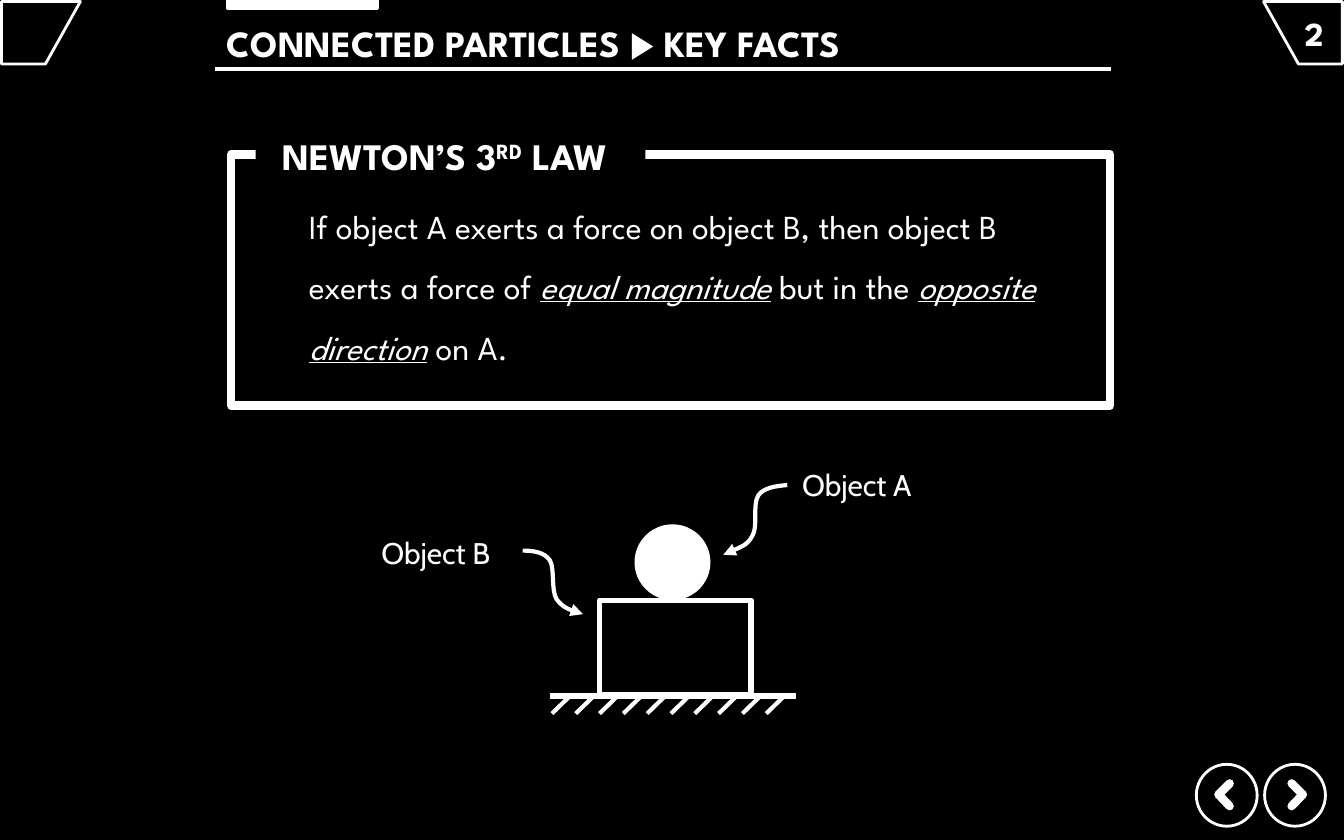
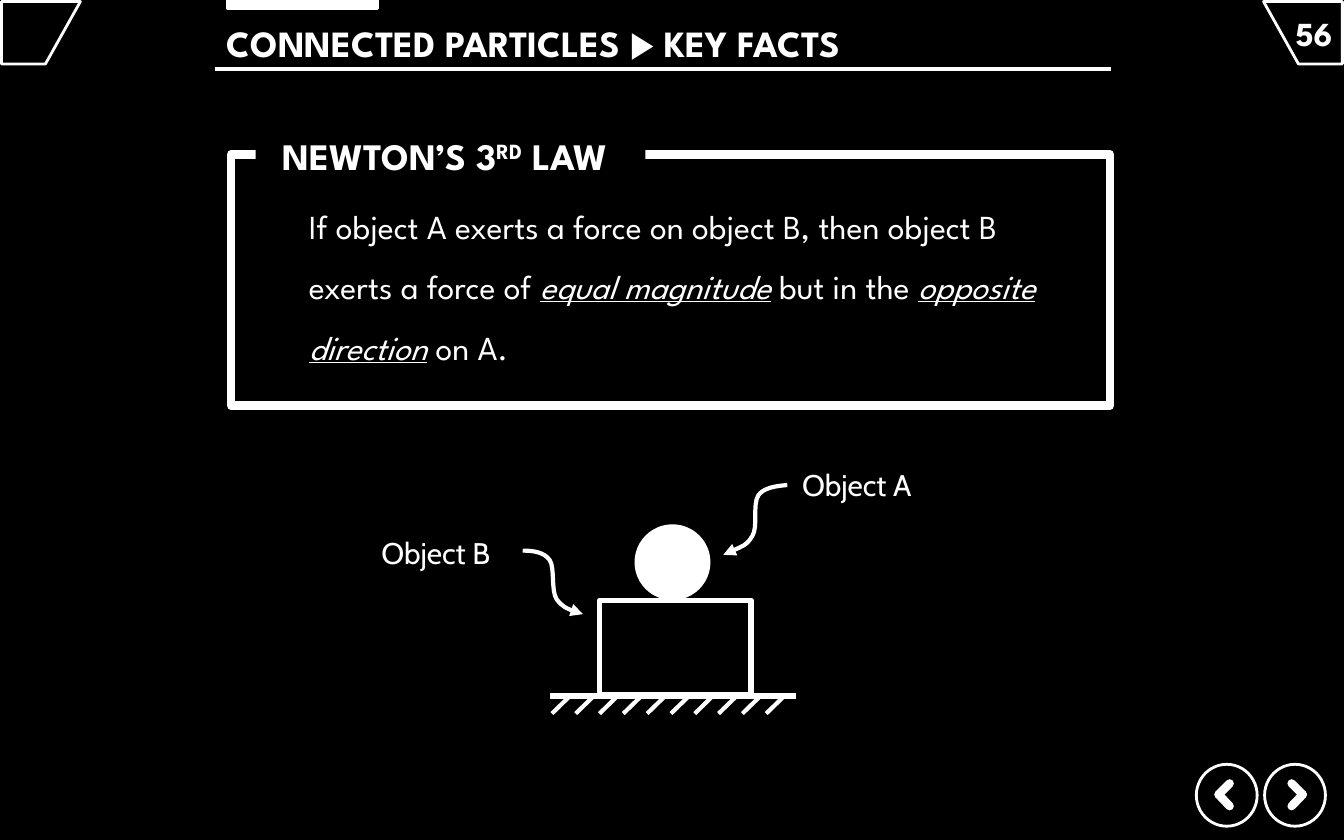
from lxml import etree
from pptx import Presentation
from pptx import util as u
from pptx.dml.color import RGBColor
from pptx.enum import shapes, text
from pptx.oxml.ns import qn

BLACK = RGBColor(0x00, 0x00, 0x00)
WHITE = RGBColor(0xFF, 0xFF, 0xFF)
HEADING_FONT, LABEL_FONT, SYMBOL_FONT = "League Spartan", "Cabin", "Arial"
SLIDE_WIDTH, SLIDE_HEIGHT = 25.4, 15.88
TITLE_ONLY = 5
PAGE_NUMBERS = ("2", "56")

# Start point, then three points for each Bézier segment, in cm
ARROW_TO_A = [(14.88, 9.17),
              (14.66, 9.19), (14.43, 9.22), (14.33, 9.37),
              (14.22, 9.55), (14.33, 9.96), (14.22, 10.13),
              (14.12, 10.31), (13.89, 10.39), (13.67, 10.49)]
ARROW_TO_B = [(9.88, 10.41),
              (10.08, 10.41), (10.29, 10.44), (10.39, 10.59),
              (10.49, 10.74), (10.41, 11.15), (10.52, 11.33),
              (10.64, 11.48), (10.82, 11.56), (11.02, 11.61)]


def cm(*lengths):
    return [u.Cm(length) for length in lengths]


def paint(shape, fill=None, line_width=None):
    """Fill and white outline, with no shadow; None leaves a part empty."""
    shape.shadow.inherit = False
    if fill is None:
        shape.fill.background()
    else:
        shape.fill.solid()
        shape.fill.fore_color.rgb = fill
    if line_width is None:
        shape.line.fill.background()
    else:
        shape.line.color.rgb = WHITE
        shape.line.width = u.Pt(line_width)


def add_figure(slide, kind, box, fill=None, line_width=None):
    figure = slide.shapes.add_shape(kind, *cm(*box))
    paint(figure, fill, line_width)
    return figure


def add_line(parent, start, end, width, cap="flat"):
    line = parent.shapes.add_connector(
        shapes.MSO_CONNECTOR.STRAIGHT, *cm(*start, *end))
    line.line.color.rgb = WHITE
    line.line.width = u.Pt(width)
    line.element.find(".//" + qn("a:ln")).set("cap", cap)
    etree.SubElement(line.element.spPr, qn("a:effectLst"))


def add_outline(slide, points, close):
    start, *rest = [cm(*point) for point in points]
    builder = slide.shapes.build_freeform(*start)
    builder.add_line_segments(rest, close=close)
    return builder.convert_to_shape()


def add_curved_arrow(slide, points):
    arrow = add_outline(slide, points, close=False)
    paint(arrow, line_width=2.25)
    # Merge each three straight segments into one cubic curve
    segments = list(arrow.element.iter(qn("a:lnTo")))
    for first in range(0, len(segments), 3):
        curve = etree.Element(qn("a:cubicBezTo"))
        segments[first].addprevious(curve)
        for segment in segments[first:first + 3]:
            curve.append(segment[0])
            segment.getparent().remove(segment)
    line = arrow.element.find(".//" + qn("a:ln"))
    etree.SubElement(line, qn("a:tailEnd"), type="triangle")


def format_paragraph(paragraph, size, font=HEADING_FONT, bold=False,
                     align=text.PP_ALIGN.LEFT):
    paragraph.alignment = align
    paragraph.font.size = u.Pt(size)
    paragraph.font.name = font
    paragraph.font.bold = bold
    paragraph.font.color.rgb = WHITE


def add_runs(paragraph, *wordings):
    runs = []
    for wording in wordings:
        run = paragraph.add_run()
        run.text = wording
        runs.append(run)
    return runs


def add_text(slide, box, anchor=text.MSO_ANCHOR.TOP):
    frame = slide.shapes.add_textbox(*cm(*box)).text_frame
    frame.word_wrap = True
    frame.vertical_anchor = anchor
    return frame.paragraphs[0]


def add_label(slide, wording, left, top):
    label = add_text(slide, (left, top, 3.02, 0.94))
    label.text = wording
    format_paragraph(label, 16, LABEL_FONT)


# Parts shared by all slides

def add_corner_tabs(slide):
    left_tab = [(0.03, 0.03), (0.03, 1.21), (0.86, 1.21), (1.52, 0.03)]
    right_tab = [(SLIDE_WIDTH - x, y) for x, y in left_tab]
    for corners in (left_tab, right_tab):
        paint(add_outline(slide, corners, close=True), BLACK, 1.5)


def add_page_number(slide, number):
    page = add_text(slide, (24.1, 0, 1.47, 1.27), text.MSO_ANCHOR.MIDDLE)
    page.text = number
    format_paragraph(page, 18, bold=True, align=text.PP_ALIGN.CENTER)


def add_navigation_button(slide, left, direction):
    """Ringed chevron; direction is -1 for back and 1 for forward."""
    add_figure(slide, shapes.MSO_SHAPE.OVAL, (left, 14.45, 1.15, 1.17),
               BLACK, 1.5)
    middle = left + 0.57
    tip = (middle + 0.15 * direction, 15.02)
    for y in (14.81, 15.24):
        add_line(slide, (middle - 0.06 * direction, y), tip, 4.5, cap="rnd")


def add_title(slide):
    title = slide.shapes.title
    title.left, title.top, title.width, title.height = cm(4.29, 0.56, 16.41, 0.61)
    frame = title.text_frame
    frame.auto_size = text.MSO_AUTO_SIZE.NONE
    frame.vertical_anchor = text.MSO_ANCHOR.MIDDLE
    frame.margin_left = frame.margin_right = 0
    frame.margin_top = frame.margin_bottom = 0
    heading = frame.paragraphs[0]
    heading.line_spacing = 0.9
    format_paragraph(heading, 19.8, bold=True)
    _, pointer, _ = add_runs(heading, "CONNECTED PARTICLES ", "▶", " KEY FACTS")
    pointer.font.name = SYMBOL_FONT


def add_slide_frame(slide, number):
    add_corner_tabs(slide)
    add_page_number(slide, number)
    add_figure(slide, shapes.MSO_SHAPE.RECTANGLE, (4.29, -0.03, 2.84, 0.2),
               WHITE, 1.5)
    add_navigation_button(slide, 23.9, 1)
    add_navigation_button(slide, 22.61, -1)
    add_line(slide, (4.06, 1.3), (21, 1.3), 2.25)
    add_title(slide)


# Content

def add_law(slide):
    add_figure(slide, shapes.MSO_SHAPE.RECTANGLE, (4.37, 2.92, 16.61, 4.75),
               line_width=4.5)
    # The black heading box interrupts the frame's top edge
    name_box = add_figure(slide, shapes.MSO_SHAPE.RECTANGLE,
                          (4.83, 2.39, 7.37, 1.12), BLACK)
    frame = name_box.text_frame
    frame.vertical_anchor = text.MSO_ANCHOR.TOP
    frame.margin_left = frame.margin_right = u.Cm(0.51)
    law_name = frame.paragraphs[0]
    format_paragraph(law_name, 20, bold=True)
    _, ordinal, _ = add_runs(law_name, "NEWTON’S 3", "RD", " LAW")
    ordinal.font._element.set("baseline", "30000")

    statement = add_text(slide, (5.59, 3.38, 14.71, 3.58))
    statement.line_spacing = 1.5
    format_paragraph(statement, 18)
    _, magnitude, _, direction, _ = add_runs(
        statement,
        "If object A exerts a force on object B, then object B exerts a force of ",
        "equal magnitude", " but in the ", "opposite direction", " on A.")
    for stressed in (magnitude, direction):
        stressed.font.italic = stressed.font.underline = True


def add_ground(slide):
    ground = slide.shapes.add_group_shape()
    add_line(ground, (10.39, 13.16), (15.04, 13.16), 3)
    for hatch in range(10):
        x = 10.8 + 0.45 * hatch
        add_line(ground, (x, 13.13), (x - 0.37, 13.49), 2.25)


def add_stacked_objects(slide):
    add_figure(slide, shapes.MSO_SHAPE.OVAL, (12.01, 9.93, 1.4, 1.4), WHITE, 1)
    add_figure(slide, shapes.MSO_SHAPE.RECTANGLE, (11.33, 11.35, 2.87, 1.78),
               line_width=3)
    add_ground(slide)
    add_label(slide, "Object A", 14.91, 8.69)
    add_curved_arrow(slide, ARROW_TO_A)
    add_label(slide, "Object B", 6.96, 9.98)
    add_curved_arrow(slide, ARROW_TO_B)


def main():
    deck = Presentation()
    deck.slide_width, deck.slide_height = cm(SLIDE_WIDTH, SLIDE_HEIGHT)
    backdrop = deck.slide_master.background.fill
    backdrop.solid()
    backdrop.fore_color.rgb = BLACK
    for number in PAGE_NUMBERS:
        slide = deck.slides.add_slide(deck.slide_layouts[TITLE_ONLY])
        add_slide_frame(slide, number)
        add_law(slide)
        add_stacked_objects(slide)
    deck.save("out.pptx")


if __name__ == "__main__":
    main()
